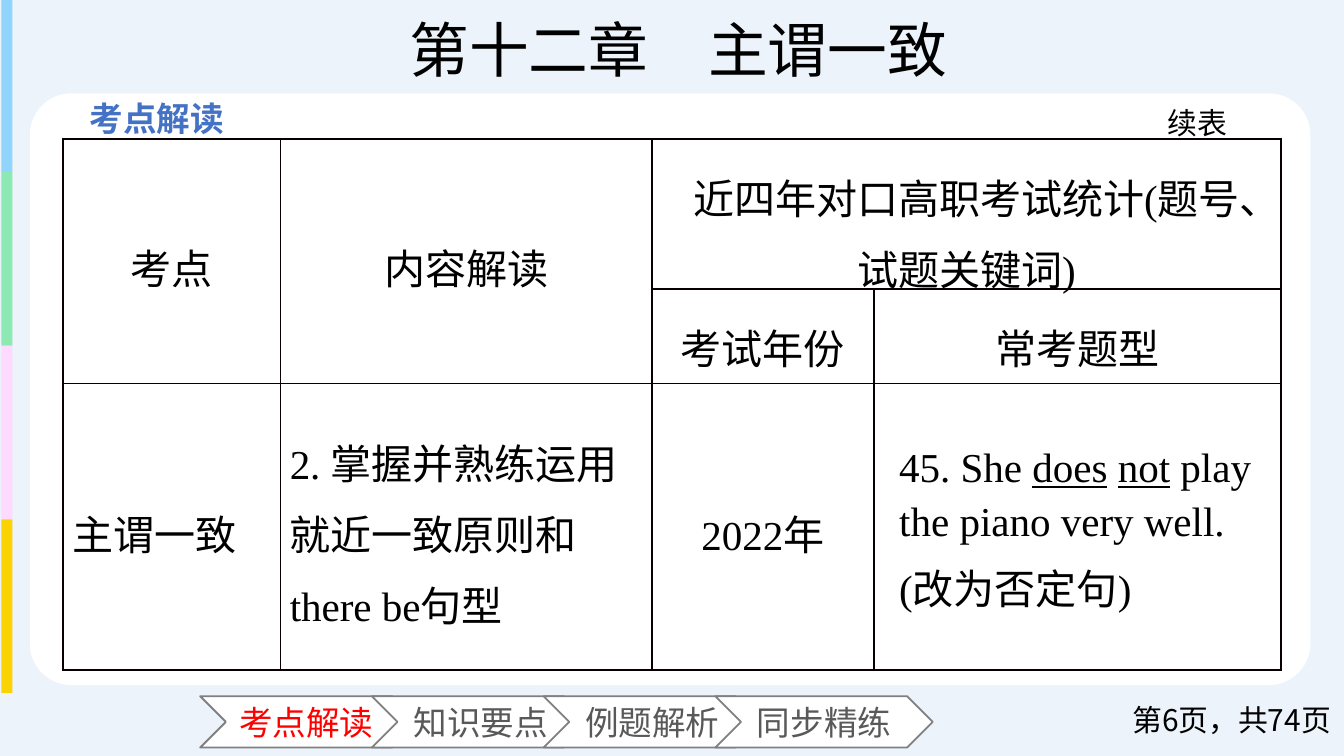
from lxml.etree import SubElement
from pptx import Presentation
from pptx.dml.color import RGBColor
from pptx.enum.shapes import MSO_SHAPE as SHAPE
from pptx.enum.text import MSO_ANCHOR as ANCHOR, PP_ALIGN as ALIGN
from pptx.oxml import parse_xml
from pptx.oxml.ns import nsdecls, qn
from pptx.util import Pt

SANS, SERIF = "Noto Sans CJK SC", "Times New Roman"
BLACK = RGBColor(0, 0, 0)
WHITE = RGBColor(255, 255, 255)
PALE_BLUE = RGBColor(0xEC, 0xF3, 0xFB)
BLUE = RGBColor(0x44, 0x72, 0xC4)
RED = RGBColor(255, 0, 0)
GRAY = RGBColor(0x80, 0x80, 0x80)
DARK_GRAY = RGBColor(0x59, 0x59, 0x59)
BORDER = RGBColor(8, 0, 0)
STRIPES = [RGBColor(0x91, 0xD5, 0xFD), RGBColor(0x8C, 0xE9, 0xB4),
           RGBColor(0xFE, 0xDA, 0xFE), RGBColor(0xFB, 0xD3, 0x02)]
NAV = ["考点解读", "知识要点", "例题解析", "同步精练"]


def style(p, size, color, font=SANS, align=ALIGN.LEFT, bold=False):
    p.alignment = align
    f = p.font
    f.size, f.bold, f.name = Pt(size), bold, font
    f.color.rgb = color
    def_rpr = p._p.pPr.find(qn("a:defRPr"))
    SubElement(def_rpr, qn("a:ea")).set("typeface", SANS)


def add_box(s, kind, x, y, w, h, fill, line=None):
    sp = s.shapes.add_shape(kind, Pt(x), Pt(y), Pt(w), Pt(h))
    sp.shadow.inherit = False
    sp.fill.solid()
    sp.fill.fore_color.rgb = fill
    if line is None:
        sp.line.fill.background()
    else:
        sp.line.color.rgb = line
        sp.line.width = Pt(1)
    return sp


def add_text(s, text, x, y, w, h, size, color=BLACK, anchor=ANCHOR.TOP, **kw):
    tf = s.shapes.add_textbox(Pt(x), Pt(y), Pt(w), Pt(h)).text_frame
    tf.word_wrap = True
    tf.vertical_anchor = anchor
    tf.text = text
    style(tf.paragraphs[0], size, color, **kw)


def add_chevron(s, text, x, color, align):
    sp = add_box(s, SHAPE.CHEVRON, x, 373, 116.5, 27.5, WHITE, GRAY)
    tf = sp.text_frame
    tf.vertical_anchor = ANCHOR.MIDDLE
    tf.text = text
    style(tf.paragraphs[0], 18, color, align=align)


def set_borders(cell):
    tc_pr = cell._tc.get_or_add_tcPr()
    for i, side in enumerate("LRTB"):
        tc_pr.insert(i, parse_xml(
            f'<a:ln{side} {nsdecls("a")} w="{Pt(1)}"><a:solidFill>'
            f'<a:srgbClr val="{BORDER}"/></a:solidFill></a:ln{side}>'))


def fill_cell(cell, runs, align=ALIGN.CENTER, inset_x=13.5, inset_y=8.5):
    """Write runs as (text, underlined) pairs."""
    cell.vertical_anchor = ANCHOR.MIDDLE
    cell.margin_left = cell.margin_right = Pt(inset_x)
    cell.margin_top = cell.margin_bottom = Pt(inset_y)
    p = cell.text_frame.paragraphs[0]
    p.line_spacing = 1.2
    style(p, 22, BLACK, SERIF, align)
    for text, underlined in runs:
        r = p.add_run()
        r.text = text
        if underlined:
            r.font.underline = True


def add_exam_table(s):
    widths, heights = [116.5, 199, 119, 218], [80.5, 50.5, 153.5]
    table = s.shapes.add_table(3, 4, Pt(33.75), Pt(74.5),
                               Pt(sum(widths)), Pt(sum(heights))).table
    table.first_row = table.horz_banding = False
    for col, width in zip(table.columns, widths):
        col.width = Pt(width)
    for row, height in zip(table.rows, heights):
        row.height = Pt(height)
    for cell in table.iter_cells():
        cell.fill.background()
        set_borders(cell)

    # Merged headings
    table.cell(0, 0).merge(table.cell(1, 0))
    table.cell(0, 1).merge(table.cell(1, 1))
    table.cell(0, 2).merge(table.cell(0, 3))

    centered = {(0, 0): "考点", (0, 1): "内容解读",
                (0, 2): "近四年对口高职考试统计(题号、试题关键词)",
                (1, 2): "考试年份", (1, 3): "常考题型", (2, 2): "2022年"}
    for (row, col), text in centered.items():
        fill_cell(table.cell(row, col), [(text, False)])

    # Left-aligned body cells
    for col, text in enumerate(["主谓一致",
                                "2. 掌握并熟练运用就近一致原则和there be句型"]):
        fill_cell(table.cell(2, col), [(text, False)], ALIGN.LEFT, 5, 0)
    fill_cell(table.cell(2, 3),
              [("45. She ", False), ("does", True), (" ", False), ("not", True),
               (" play the piano very well. (改为否定句)", False)], ALIGN.LEFT)


def main():
    prs = Presentation()
    prs.slide_width, prs.slide_height = Pt(720), Pt(405)
    s = prs.slides.add_slide(prs.slide_layouts[6])

    # Background, side stripes and white panel
    add_box(s, SHAPE.RECTANGLE, 0, 0, 720, 405, PALE_BLUE)
    for i, color in enumerate(STRIPES):
        add_box(s, SHAPE.RECTANGLE, 0.75, -0.75 + 93 * i, 6, 93, color)
    panel = add_box(s, SHAPE.ROUNDED_RECTANGLE, 16, 50, 686, 317, WHITE)
    panel.adjustments[0] = 0.07

    # Headings
    add_text(s, "考点解读", 41, 49, 104.5, 24.5, 18, BLUE, bold=True)
    add_text(s, "第十二章\u3000主谓一致".replace("\u3000", "　"), 126.5, 3.5, 474, 46, 32,
             font=SERIF, align=ALIGN.CENTER)

    # Navigation bar
    for i, text in enumerate(NAV):
        add_chevron(s, text, 107.25 + 92 * i, DARK_GRAY if i else RED,
                    ALIGN.CENTER if i else ALIGN.JUSTIFY)

    # Page number, table and continuation mark
    add_text(s, "第6页，共74页", 574, 375, 146, 21.5, 16,
             anchor=ANCHOR.MIDDLE, align=ALIGN.RIGHT)
    add_exam_table(s)
    add_text(s, "续表", 618.5, 52.5, 55.5, 19.5, 16)

    prs.save("out.pptx")


if __name__ == "__main__":
    main()
